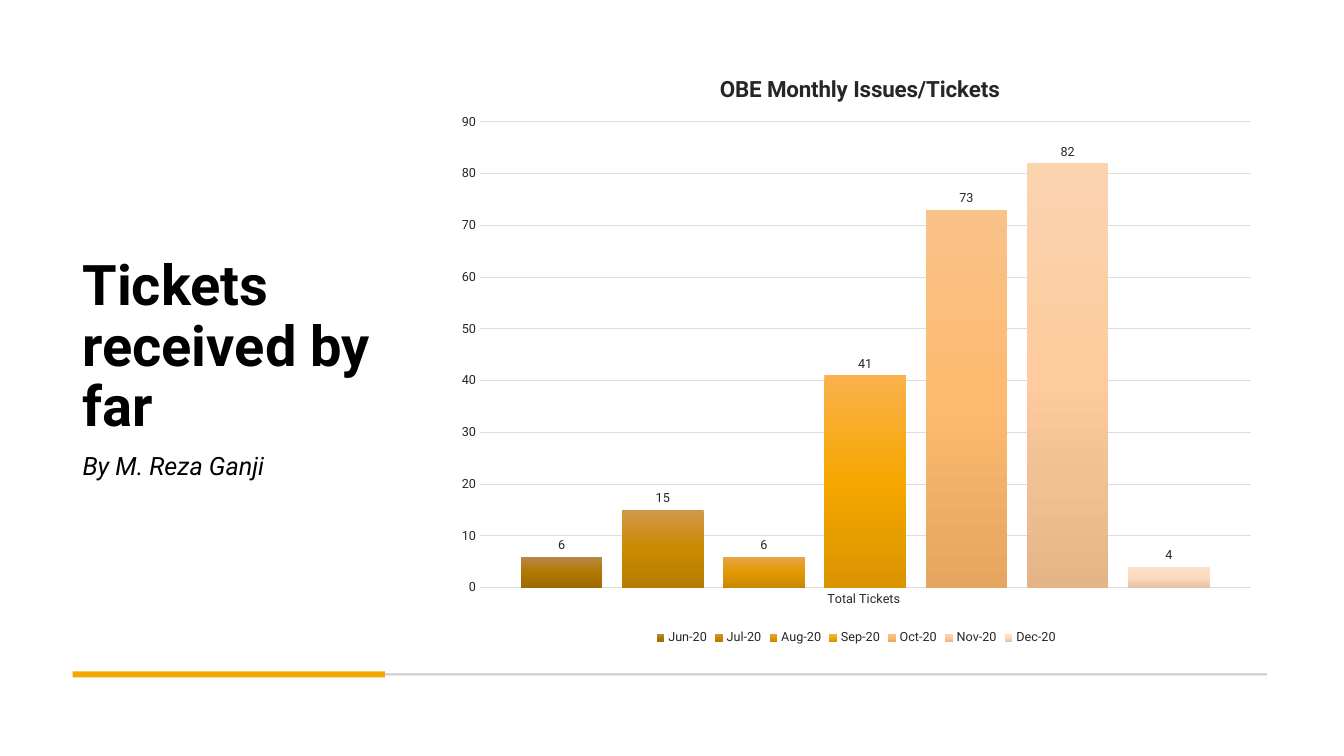
import copy

import pptx
import pptx.chart.data
import pptx.dml.color
import pptx.enum.chart
import pptx.enum.shapes
import pptx.enum.text
import pptx.oxml
import pptx.oxml.ns
import pptx.util

Pt = pptx.util.Pt
qn = pptx.oxml.ns.qn

# Content
HEADING = "Tickets received by far"
BYLINE = "By M. Reza Ganji"
CHART_TITLE = "OBE Monthly Issues/Tickets"
CATEGORY = "Total Tickets "
MONTHS = [  # name, tickets, gradient from top to bottom
    ("Jun-20", 6, ("BA884B", "B07800", "9D6B00")),
    ("Jul-20", 15, ("D2974B", "CB8A00", "B57B00")),
    ("Aug-20", 6, ("E7A44B", "E19900", "C88800")),
    ("Sep-20", 41, ("FAB14B", "F5A700", "DA9400")),
    ("Oct-20", 73, ("F9C288", "FDBA70", "E5A65F")),
    ("Nov-20", 82, ("FBD3AF", "FDCB9D", "E5B588")),
    ("Dec-20", 4, ("FCE1CB", "FDDABD", "E5C2A4")),
]

THEME = {
    "font": "Roboto",
    "text": "000000", "chart_text": "262626", "grid": "DEDEDE",
    "rule": "C9C9C9", "accent": "F5A700",
    "heading": 40, "byline": 18, "chart_title": 16, "label": 9,
}

# Positions in points
LEFT, TOP, HEIGHT = 51.84, 33.84, 429.84
RIGHT = 905.04
COLUMN_WIDTH = 223.2
CHART_LEFT = 318.24
RULE_MIDDLE = 481.8

# Positions as fractions of the chart
PLOT_LAYOUT = {"x": 0.042, "y": 0.124, "w": 0.938, "h": 0.774}
TITLE_LAYOUT = {"x": 0.329, "y": 0.039}


def color(name):
    return pptx.dml.color.RGBColor.from_string(THEME[name])


def style_font(font, size, color_name, bold=False, italic=False):
    font.name = THEME["font"]
    font.size = Pt(THEME[size])
    font.bold = bold
    font.italic = italic
    font.color.rgb = color(color_name)


def add_text(slide, text, box, size, wrap, **style):
    frame = slide.shapes.add_textbox(*map(Pt, box)).text_frame
    frame.word_wrap = wrap
    frame.vertical_anchor = pptx.enum.text.MSO_ANCHOR.MIDDLE
    run = frame.paragraphs[0].add_run()
    run.text = text
    style_font(run.font, size, "text", **style)
    return frame


def add_rule(slide, width, thickness, color_name):
    shape = slide.shapes.add_shape(
        pptx.enum.shapes.MSO_SHAPE.RECTANGLE, Pt(LEFT),
        Pt(RULE_MIDDLE - thickness / 2), Pt(width), Pt(thickness))
    shape.shadow.inherit = False
    shape.fill.solid()
    shape.fill.fore_color.rgb = color(color_name)
    shape.line.fill.background()


def layout_element(fractions):
    modes = "".join(f'<c:{key}Mode val="edge"/>' for key in "xy")
    values = "".join(f'<c:{key} val="{value}"/>' for key, value in fractions.items())
    target = '<c:layoutTarget val="inner"/>' if "w" in fractions else ""
    return pptx.oxml.parse_xml(
        f'<c:layout {pptx.oxml.ns.nsdecls("c")}><c:manualLayout>'
        f'{target}{modes}{values}</c:manualLayout></c:layout>')


def place(parent, index, fractions):
    for old in parent.findall(qn("c:layout")):
        parent.remove(old)
    parent.insert(index, layout_element(fractions))


def fill_gradient(series, shades):
    fill = series.format.fill
    fill.gradient()
    fill.gradient_angle = 270
    stop_list = series._element.find(".//" + qn("a:gsLst"))
    stop_list.append(copy.deepcopy(stop_list[-1]))
    for stop, position, shade in zip(fill.gradient_stops, (0, 0.5, 1), shades):
        stop.position = position
        stop.color.rgb = pptx.dml.color.RGBColor.from_string(shade)


def add_ticket_chart(slide):
    data = pptx.chart.data.CategoryChartData()
    data.categories = [CATEGORY]
    for name, tickets, _ in MONTHS:
        data.add_series(name, [tickets])
    chart = slide.shapes.add_chart(
        pptx.enum.chart.XL_CHART_TYPE.COLUMN_CLUSTERED, Pt(CHART_LEFT), Pt(TOP),
        Pt(RIGHT - CHART_LEFT), Pt(HEIGHT), data).chart
    style_font(chart.font, "label", "chart_text")

    # Title
    run = chart.chart_title.text_frame.paragraphs[0].add_run()
    run.text = CHART_TITLE
    style_font(run.font, "chart_title", "chart_text", bold=True)
    chart.chart_title.include_in_layout = False
    place(chart.chart_title._element, 1, TITLE_LAYOUT)

    # Legend
    chart.has_legend = True
    chart.legend.position = pptx.enum.chart.XL_LEGEND_POSITION.BOTTOM
    chart.legend.include_in_layout = False
    style_font(chart.legend.font, "label", "chart_text")

    # Axes
    for axis in (chart.category_axis, chart.value_axis):
        axis.major_tick_mark = pptx.enum.chart.XL_TICK_MARK.NONE
        axis.minor_tick_mark = pptx.enum.chart.XL_TICK_MARK.NONE
        style_font(axis.tick_labels.font, "label", "chart_text")
    values = chart.value_axis
    values.minimum_scale, values.maximum_scale, values.major_unit = 0, 90, 10
    values.format.line.fill.background()
    values.has_major_gridlines = True
    for line in (values.major_gridlines.format.line, chart.category_axis.format.line):
        line.width = Pt(0.75)
        line.color.rgb = color("grid")

    # Columns
    plot = chart.plots[0]
    plot.vary_by_categories = False
    plot.gap_width, plot.overlap = 100, -24
    for series, (_, _, shades) in zip(plot.series, MONTHS):
        fill_gradient(series, shades)
        labels = series.data_labels
        labels.show_value = True
        labels.position = pptx.enum.chart.XL_LABEL_POSITION.OUTSIDE_END
        style_font(labels.font, "label", "chart_text")
    place(chart._chartSpace.find(".//" + qn("c:plotArea")), 0, PLOT_LAYOUT)


def main():
    presentation = pptx.Presentation()
    presentation.slide_width, presentation.slide_height = Pt(960), Pt(540)
    slide = presentation.slides.add_slide(presentation.slide_layouts[6])

    # Heading and rules
    heading = add_text(slide, HEADING, (LEFT, TOP, COLUMN_WIDTH, HEIGHT),
                       "heading", True, bold=True)
    heading.paragraphs[0].line_spacing = 0.9
    add_rule(slide, RIGHT - LEFT, 1.44, "rule")
    add_rule(slide, COLUMN_WIDTH, 4.32, "accent")

    # Chart and byline
    add_ticket_chart(slide)
    byline = add_text(slide, BYLINE, (LEFT, 318.24, 150.48, 28.8),
                      "byline", False, italic=True)
    byline.auto_size = pptx.enum.text.MSO_AUTO_SIZE.SHAPE_TO_FIT_TEXT

    presentation.save("out.pptx")


if __name__ == "__main__":
    main()
